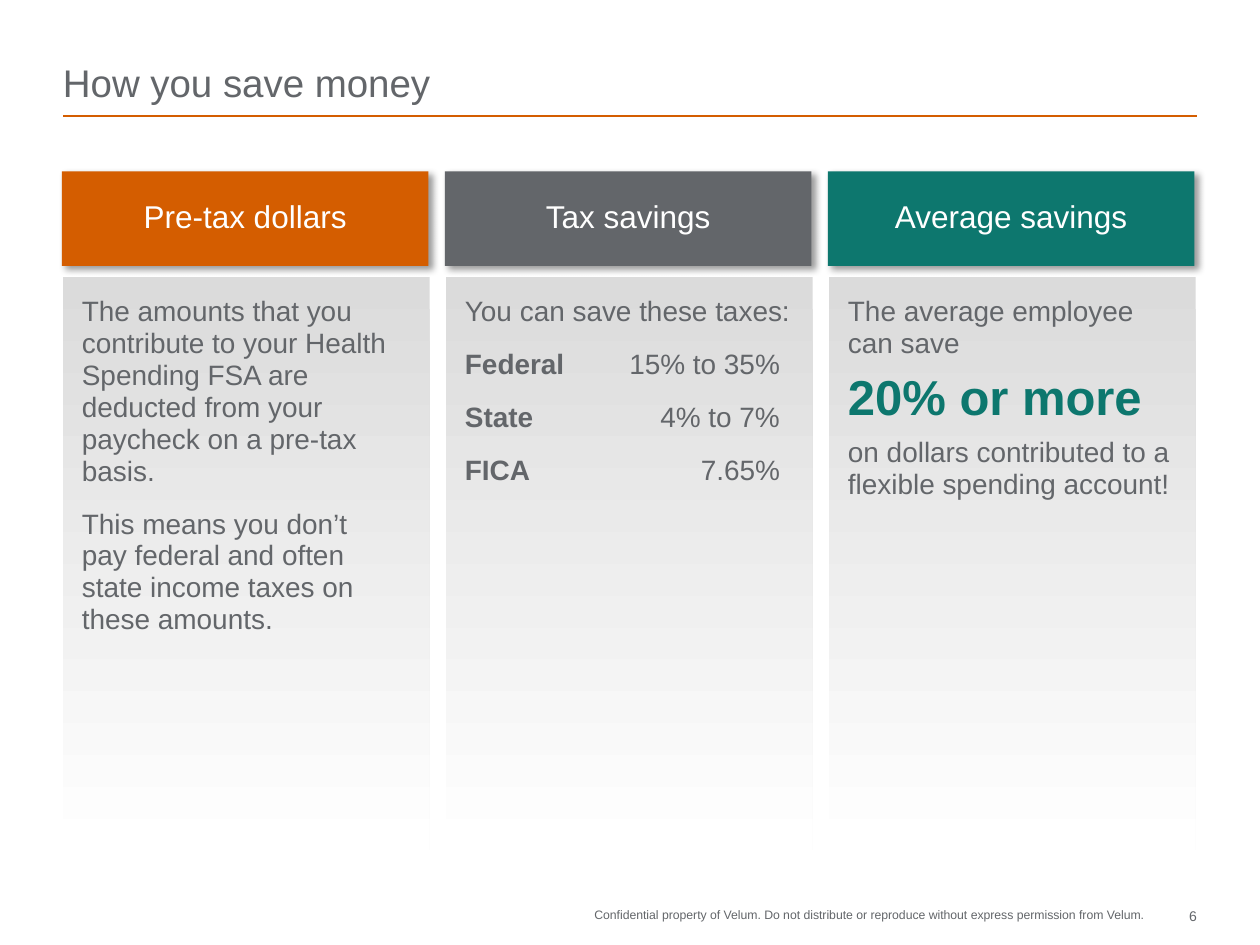
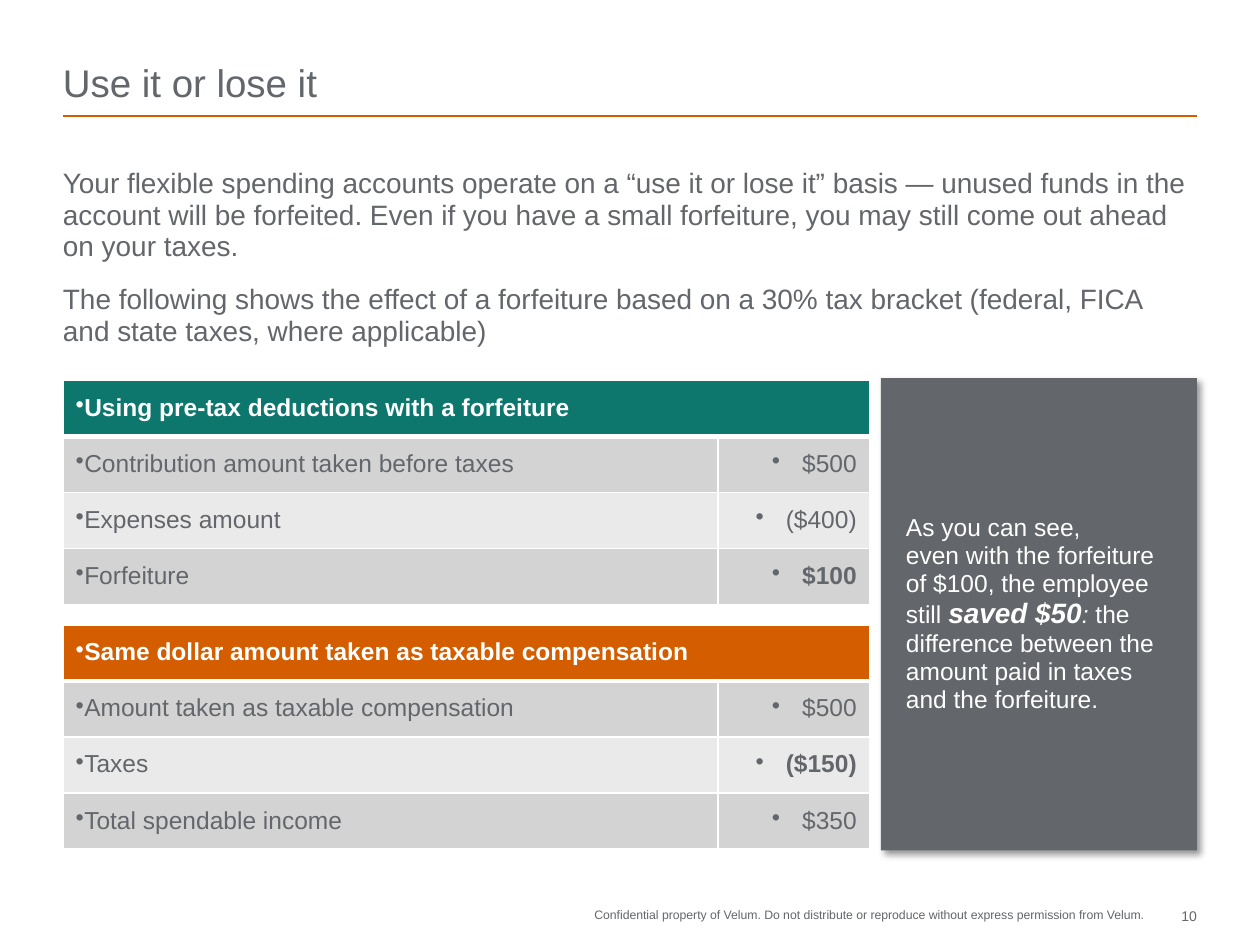
from collections import namedtuple
from dataclasses import dataclass

from lxml.etree import SubElement
from pptx import Presentation
from pptx.dml.color import RGBColor
from pptx.enum.shapes import MSO_CONNECTOR as Connector, MSO_SHAPE as Shape
from pptx.enum.text import MSO_ANCHOR as Anchor, PP_ALIGN as Align
from pptx.oxml import parse_xml
from pptx.oxml.ns import nsdecls, qn
from pptx.util import Inches, Pt


@dataclass(frozen=True)
class Theme:
    font: str = "Arial"
    orange: str = "D45D00"
    teal: str = "0D776E"
    gray: str = "63666A"
    white: str = "FFFFFF"
    panel: str = "DBDBDB"
    bands: tuple = ("D3D3D4", "EAEAEB")
    title: float = 22
    head: float = 18
    body: float = 16
    cell: float = 14
    big: float = 28
    number: float = 8
    footer: float = 7


THEME = Theme()

# The slide is a grid of 100 columns and 75 rows with square cells
COLUMNS, ROWS = 100, 75
CELL = Inches(10) / COLUMNS
Box = namedtuple("Box", "left top width height")
PAGE = Box(5, 0, 90, ROWS)
FOOTER = ("Confidential property of Velum. Do not distribute or reproduce "
          "without express permission from Velum.")


def grid(*units):
    return [round(unit * CELL) for unit in units]


def color(code):
    return RGBColor.from_string(code)


# ---- Text ----

def style(font, size, ink, bold=False, italic=False):
    font.name, font.size = THEME.font, Pt(size)
    font.bold, font.italic = bold, italic
    font.color.rgb = color(ink)


def write(frame, paras, size=THEME.body, ink=THEME.gray, bold=False, align=Align.LEFT,
          anchor=Anchor.TOP, spacing=0.95, before=12, inset=(0, 0, 0, 0), wrap=True,
          tab=None, bullet_indent=None):
    """Each paragraph is a string or a list of strings and (string, format) pairs.

    A para may also be (spans, space before) when it is a tuple.
    """
    frame.word_wrap, frame.vertical_anchor = wrap, anchor
    (frame.margin_left, frame.margin_top,
     frame.margin_right, frame.margin_bottom) = grid(*inset)
    for index, spans in enumerate(paras):
        para = frame.paragraphs[0] if index == 0 else frame.add_paragraph()
        spans, gap = spans if isinstance(spans, tuple) else (spans, before)
        para.alignment, para.line_spacing = align, spacing
        para.space_before = Pt(gap if index else 0)
        props = para._p.get_or_add_pPr()
        if bullet_indent is not None:
            indent, = grid(bullet_indent)
            props.set("marL", str(indent))
            props.set("indent", str(-indent))
            SubElement(props, qn("a:buChar"), char="•")
        if tab:
            stops = SubElement(props, qn("a:tabLst"))
            SubElement(stops, qn("a:tab"), pos=str(grid(tab)[0]), algn="r")
        style(para.font, size, ink, bold)
        for span in [spans] if isinstance(spans, str) else spans:
            text, extra = (span, {}) if isinstance(span, str) else span
            for number, line in enumerate(text.split("\n")):
                if number:
                    para.add_line_break()
                run = para.add_run()
                run.text = line
                style(run.font, **{"size": size, "ink": ink, "bold": bold, **extra})


def add_text(page, box, paras, **format):
    write(page.shapes.add_textbox(*grid(*box)).text_frame, paras, **format)


# ---- Shapes ----

def add_block(page, box, fill=None, shadow=False):
    """A rectangle with a plain fill, or a fading one when no fill is given."""
    block = page.shapes.add_shape(Shape.RECTANGLE, *grid(*box))
    block.shadow.inherit = False
    block.line.fill.background()
    if fill:
        block.fill.solid()
        block.fill.fore_color.rgb = color(fill)
    else:
        block.fill.gradient()
        block.fill.gradient_angle = 270
        for stop, shade in zip(block.fill.gradient_stops, (THEME.panel, THEME.white)):
            stop.color.rgb = color(shade)
    if shadow:
        effects = block._element.spPr.find(qn("a:effectLst"))
        effects.append(parse_xml(
            f'<a:outerShdw {nsdecls("a")} blurRad="{Pt(4)}" dist="{Pt(3)}" dir="2700000" '
            'algn="tl" rotWithShape="0"><a:srgbClr val="000000"><a:alpha val="40000"/>'
            '</a:srgbClr></a:outerShdw>'))
    return block.text_frame


def add_base(deck, title, number):
    """A page with the title, its rule and the footer."""
    page = deck.slides.add_slide(deck.slide_layouts[6])
    right = PAGE.left + PAGE.width
    rule = page.shapes.add_connector(Connector.STRAIGHT, *grid(PAGE.left, 9.2, right, 9.2))
    rule.line.color.rgb, rule.line.width = color(THEME.orange), Pt(1)
    SubElement(rule._element.spPr, qn("a:effectLst"))
    add_text(page, Box(PAGE.left, 1.7, PAGE.width, 6.7), [title], size=THEME.title,
             anchor=Anchor.BOTTOM, spacing=0.9)
    add_text(page, Box(46.4, 72, 44.4, 1.2), [FOOTER], size=THEME.footer,
             align=Align.RIGHT, spacing=1, wrap=False)
    add_text(page, Box(right - 3.3, 72, 3.3, 1.7), [str(number)], size=THEME.number,
             align=Align.RIGHT, spacing=1)
    return page


# ---- Savings columns ----

def add_column(page, box, heading, fill, paras, tab=None):
    head = Box(box.left - 0.1, box.top, box.width, 7.5)
    body = Box(box.left, box.top + 8.4, box.width, box.height - 8.4)
    write(add_block(page, body), paras, inset=(1.5,) * 4, tab=tab)
    write(add_block(page, head, fill, shadow=True), [heading], size=THEME.head,
          ink=THEME.white, align=Align.CENTER, anchor=Anchor.MIDDLE, spacing=0.9,
          inset=(1,) * 4)


def add_savings_page(deck):
    page = add_base(deck, "How you save money", 6)
    taxes = [("Federal", "15% to 35%"), ("State", "4% to 7%"), ("FICA", "7.65%")]
    columns = [
        ("Pre-tax dollars", THEME.orange, [
            "The amounts that you contribute to your Health Spending FSA are deducted "
            "from your paycheck on a pre-tax basis.",
            "This means you don’t\npay federal and often state income taxes on these "
            "amounts."], None),
        ("Tax savings", THEME.gray, ["You can save these taxes:"] + [
            [(name, {"bold": True}), "\t" + rate] for name, rate in taxes], 25),
        ("Average savings", THEME.teal, [
            "The average employee can save",
            ([("20% or more", {"size": THEME.big, "ink": THEME.teal, "bold": True})], 6),
            ("on dollars contributed to a flexible spending account!", 6)], None),
    ]
    width, gap = 29.1, 1.3
    for index, column in enumerate(columns):
        box = Box(PAGE.left + index * (width + gap), 13.6, width, 53.9)
        add_column(page, box, *column)


# ---- Forfeiture tables ----

def format_cell(cell, fill, bottom=1):
    props = cell._tc.get_or_add_tcPr()
    for side, width in (("L", 1), ("R", 1), ("T", 1), ("B", bottom)):
        edge = SubElement(props, qn(f"a:ln{side}"), w=str(Pt(width)))
        ink = SubElement(edge, qn("a:solidFill"))
        SubElement(ink, qn("a:srgbClr"), val=THEME.white)
    cell.fill.solid()
    cell.fill.fore_color.rgb = color(fill)


def add_amounts(page, box, heading, fill, rows, bold_amount):
    table = page.shapes.add_table(len(rows) + 1, 2, *grid(*box)).table
    amount_width = 12
    table.columns[0].width, table.columns[1].width = grid(
        box.width - amount_width, amount_width)
    for row in table.rows:
        row.height, = grid(box.height / (len(rows) + 1))
    common = dict(size=THEME.cell, anchor=Anchor.MIDDLE, inset=(1, 0.5, 1, 0.5))

    # Heading across both columns
    table.cell(0, 0).merge(table.cell(0, 1))
    for column in range(2):
        format_cell(table.cell(0, column), fill, bottom=3)
    write_cell(table.cell(0, 0), heading, ink=THEME.white, bold=True, bullet_indent=0,
               **common)

    # Labels and amounts
    for index, (label, amount) in enumerate(rows):
        name, value = table.cell(index + 1, 0), table.cell(index + 1, 1)
        for cell in (name, value):
            format_cell(cell, THEME.bands[index % 2])
        write_cell(name, label, bullet_indent=0, **common)
        write_cell(value, amount, align=Align.RIGHT, bold=amount == bold_amount,
                   bullet_indent=2.4, **common)


def write_cell(cell, text, anchor, inset, **format):
    write(cell.text_frame, [text], anchor=anchor, **format)
    cell.vertical_anchor = anchor
    (cell.margin_left, cell.margin_top,
     cell.margin_right, cell.margin_bottom) = grid(*inset)


def add_forfeiture_page(deck):
    page = add_base(deck, "Use it or lose it", 10)
    add_text(page, Box(PAGE.left, 13.3, PAGE.width, 14.2), [
        "Your flexible spending accounts operate on a “use it or lose it” basis — unused "
        "funds in the account will be forfeited. Even if you have a small forfeiture, you "
        "may still come out ahead on your taxes.",
        "The following shows the effect of a forfeiture based on a 30% tax bracket "
        "(federal, FICA and state taxes, where applicable)"])

    # Conclusion beside the tables
    write(add_block(page, Box(69.9, 30, 25.1, 37.5), THEME.gray, shadow=True), [[
        "As you can see,\neven with the forfeiture\nof $100, the employee still ",
        ("saved $50", {"size": THEME.body, "bold": True, "italic": True}),
        (":", {"italic": True}),
        " the difference between the amount paid in taxes\nand the forfeiture."]],
        size=THEME.cell, ink=THEME.white, anchor=Anchor.MIDDLE, inset=(2, 1, 1, 1))

    tables = [
        ("Using pre-tax deductions with a forfeiture", THEME.teal,
         [("Contribution amount taken before taxes", "$500"),
          ("Expenses amount", "($400)"), ("Forfeiture", "$100")], "$100"),
        ("Same dollar amount taken as taxable compensation", THEME.orange,
         [("Amount taken as taxable compensation", "$500"),
          ("Taxes", "($150)"), ("Total spendable income", "$350")], "($150)"),
    ]
    height, gap = 17.8, 1.6
    for index, table in enumerate(tables):
        box = Box(PAGE.left, 30.2 + index * (height + gap), 64, height)
        add_amounts(page, box, *table)


def main():
    deck = Presentation()
    deck.slide_width, deck.slide_height = grid(COLUMNS, ROWS)
    add_savings_page(deck)
    add_forfeiture_page(deck)
    deck.save("out.pptx")


if __name__ == "__main__":
    main()
